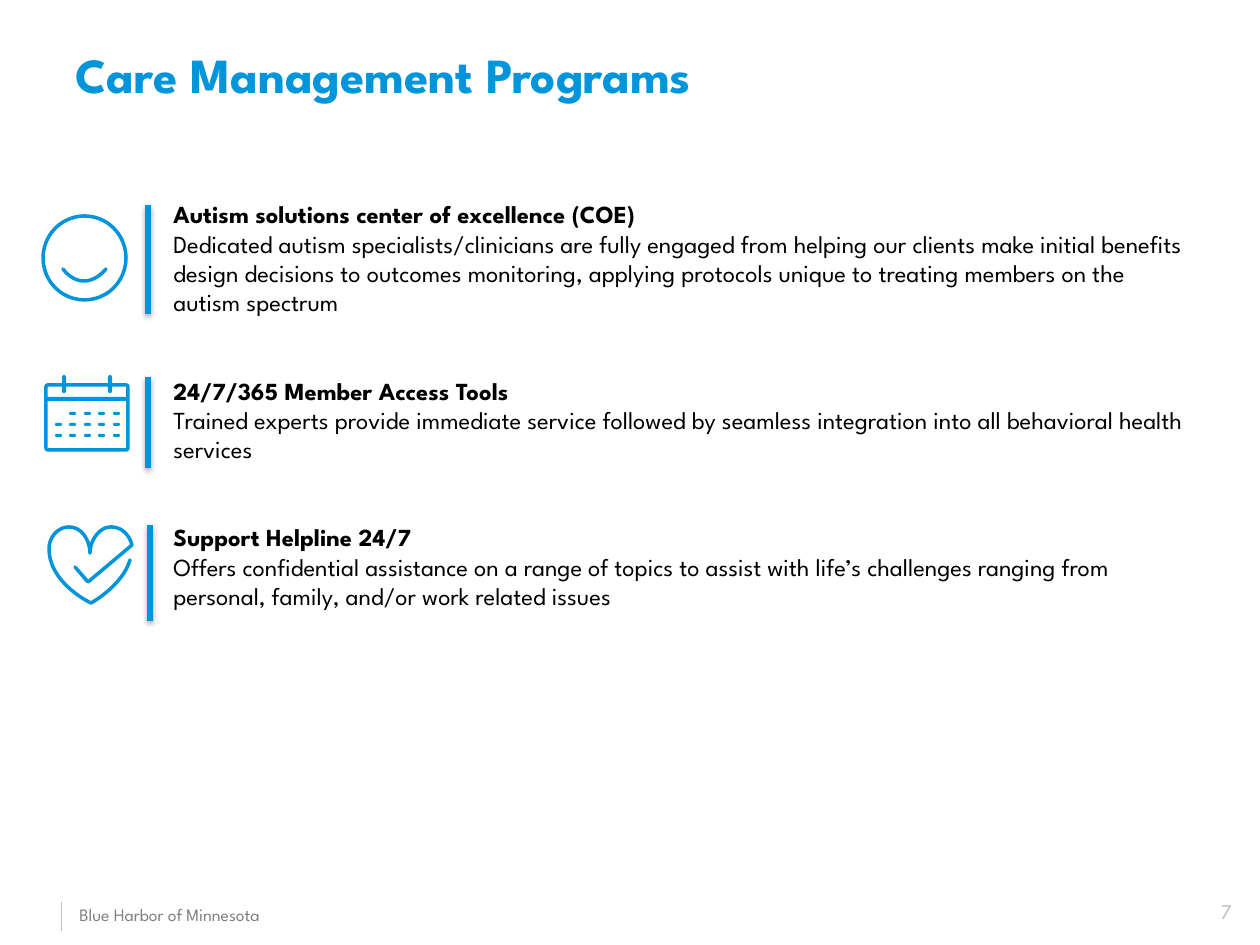
import pptx
import pptx.dml.color
import pptx.enum.shapes
import pptx.enum.text
import pptx.oxml
import pptx.oxml.ns
import pptx.util

SHAPE = pptx.enum.shapes.MSO_SHAPE
ALIGN = pptx.enum.text.PP_ALIGN
ANCHOR = pptx.enum.text.MSO_ANCHOR
SCALE = 914400 / 126
BLUE, BLACK, GREY, PALE = "0095DA", "000000", "808080", "BEC0C2"
EFFECTS = '<a:effectLst xmlns:a="http://schemas.openxmlformats.org/drawingml/2006/main">%s</a:effectLst>'
SHADOW = (
    '<a:outerShdw blurRad="40000" dist="20000" dir="5400000" rotWithShape="0">'
    '<a:srgbClr val="000000"><a:alpha val="38000"/></a:srgbClr></a:outerShdw>'
)


def px(n):
    return pptx.util.Emu(round(n * SCALE))


def color(value):
    return pptx.dml.color.RGBColor.from_string(value)


def bezier(p0, p1, p2, p3, steps=16):
    for i in range(1, steps + 1):
        t = i / steps
        u = 1 - t
        yield tuple(
            u**3 * a + 3 * u * u * t * b + 3 * u * t * t * c + t**3 * d
            for a, b, c, d in zip(p0, p1, p2, p3)
        )


class Deck:
    font = "League Spartan"
    stroke = 2

    def __init__(self, width, height):
        self.prs = pptx.Presentation()
        self.prs.slide_width, self.prs.slide_height = px(width), px(height)
        self.s = self.prs.slides.add_slide(self.prs.slide_layouts[6])

    def text(self, box, paragraphs, size, fill=BLACK, align=ALIGN.LEFT,
             anchor=ANCHOR.TOP, gap=0):
        tf = self.s.shapes.add_textbox(*map(px, box)).text_frame
        tf.word_wrap = True
        tf.vertical_anchor = anchor
        for i, runs in enumerate(paragraphs):
            p = tf.add_paragraph() if i else tf.paragraphs[0]
            p.alignment = align
            p.space_before = pptx.util.Pt(gap if i else 0)
            for j, (content, bold) in enumerate(runs):
                if j:
                    p.add_line_break()
                r = p.add_run()
                r.text = content
                r.font.name = self.font
                r.font.size = pptx.util.Pt(size)
                r.font.bold = bold
                r.font.color.rgb = color(fill)

    def rule(self, x, top, bottom, fill, width, effect=""):
        sp = self.s.shapes.add_connector(
            pptx.enum.shapes.MSO_CONNECTOR.STRAIGHT, px(x), px(top), px(x), px(bottom))
        sp.line.color.rgb = color(fill)
        sp.line.width = pptx.util.Pt(width)
        sp._element.spPr.append(pptx.oxml.parse_xml(EFFECTS % effect))

    def outline(self, sp):
        sp.shadow.inherit = False
        sp.fill.background()
        sp.line.color.rgb = color(BLUE)
        sp.line.width = pptx.util.Pt(self.stroke)
        sp._element.spPr.find(pptx.oxml.ns.qn("a:ln")).set("cap", "rnd")

    def ring(self, kind, box, radius=None):
        sp = self.s.shapes.add_shape(kind, *map(px, box))
        if radius is not None:
            sp.adjustments[0] = radius
        self.outline(sp)

    def pill(self, *box):
        sp = self.s.shapes.add_shape(SHAPE.ROUNDED_RECTANGLE, *map(px, box))
        sp.adjustments[0] = 0.5
        sp.shadow.inherit = False
        sp.fill.solid()
        sp.fill.fore_color.rgb = color(BLUE)
        sp.line.fill.background()

    def path_line(self, points):
        start, *rest = [(px(x), px(y)) for x, y in points]
        builder = self.s.shapes.build_freeform(*start)
        builder.add_line_segments(rest, close=False)
        self.outline(builder.convert_to_shape())

    def curve(self, start, *segments):
        points = [start]
        for segment in segments:
            points.extend(bezier(points[-1], *segment))
        self.path_line(points)

    def smile_icon(self):
        self.ring(SHAPE.OVAL, (43, 216, 83, 84))
        self.curve((63, 269), ((63, 269), (71, 281), (84, 281)),
                   ((97, 281), (106, 269), (106, 269)))

    def calendar_icon(self):
        self.ring(SHAPE.ROUNDED_RECTANGLE, (46, 385, 82, 65), 0.03)
        for x in (62, 108):
            self.pill(x, 375, 4, 18)
        self.pill(45, 397, 83, 4)
        for row in range(3):
            for col in range(0 if row else 1, 5):
                self.pill(55 + col * 29 // 2, 412 + row * 11, 7, 3)

    def heart_icon(self):
        dip = (90, 553)
        self.curve(dip, ((90, 541), (82, 527), (69, 527)),
                   ((58, 527), (49, 537), (49, 549)),
                   ((49, 581), (86, 601), (91, 603)),
                   ((95, 601), (123, 584), (130, 560)))
        self.curve(dip, ((90, 541), (99, 527), (111, 527)),
                   ((121, 527), (129, 534), (132, 545)))
        self.path_line([(75, 567), (88, 582), (132, 545)])


PROGRAMS = [
    ("Autism solutions center of excellence (COE)",
     "Dedicated autism specialists/clinicians are fully engaged from helping our clients "
     "make initial benefits design decisions to outcomes monitoring, applying protocols "
     "unique to treating members on the autism spectrum"),
    ("24/7/365 Member Access Tools",
     "Trained experts provide immediate service followed by seamless integration into all "
     "behavioral health services"),
    ("Support Helpline 24/7",
     "Offers confidential assistance on a range of topics to assist with life’s challenges "
     "ranging from personal, family, and/or work related issues"),
]
BARS = [(148, 205, 314), (148, 377, 468), (150, 525, 621)]


def main():
    deck = Deck(1260, 945)
    deck.rule(61, 902, 931, PALE, 0.5)
    deck.text((67, 898, 270, 34), [[("Blue Harbor of Minnesota", False)]], 10, GREY)
    deck.text((1037, 892, 207, 38), [[("7", False)]], 12, PALE, ALIGN.RIGHT, ANCHOR.MIDDLE)
    deck.text((63, 38, 1134, 82), [[("Care Management Programs", True)]], 28, BLUE)
    deck.text((161, 193, 1046, 488),
              [[(name, True), (detail, False)] for name, detail in PROGRAMS], 14, gap=33.5)
    for x, top, bottom in BARS:
        deck.rule(x, top, bottom, BLUE, 3, SHADOW)
    deck.smile_icon()
    deck.calendar_icon()
    deck.heart_icon()
    deck.prs.save("out.pptx")


if __name__ == "__main__":
    main()
